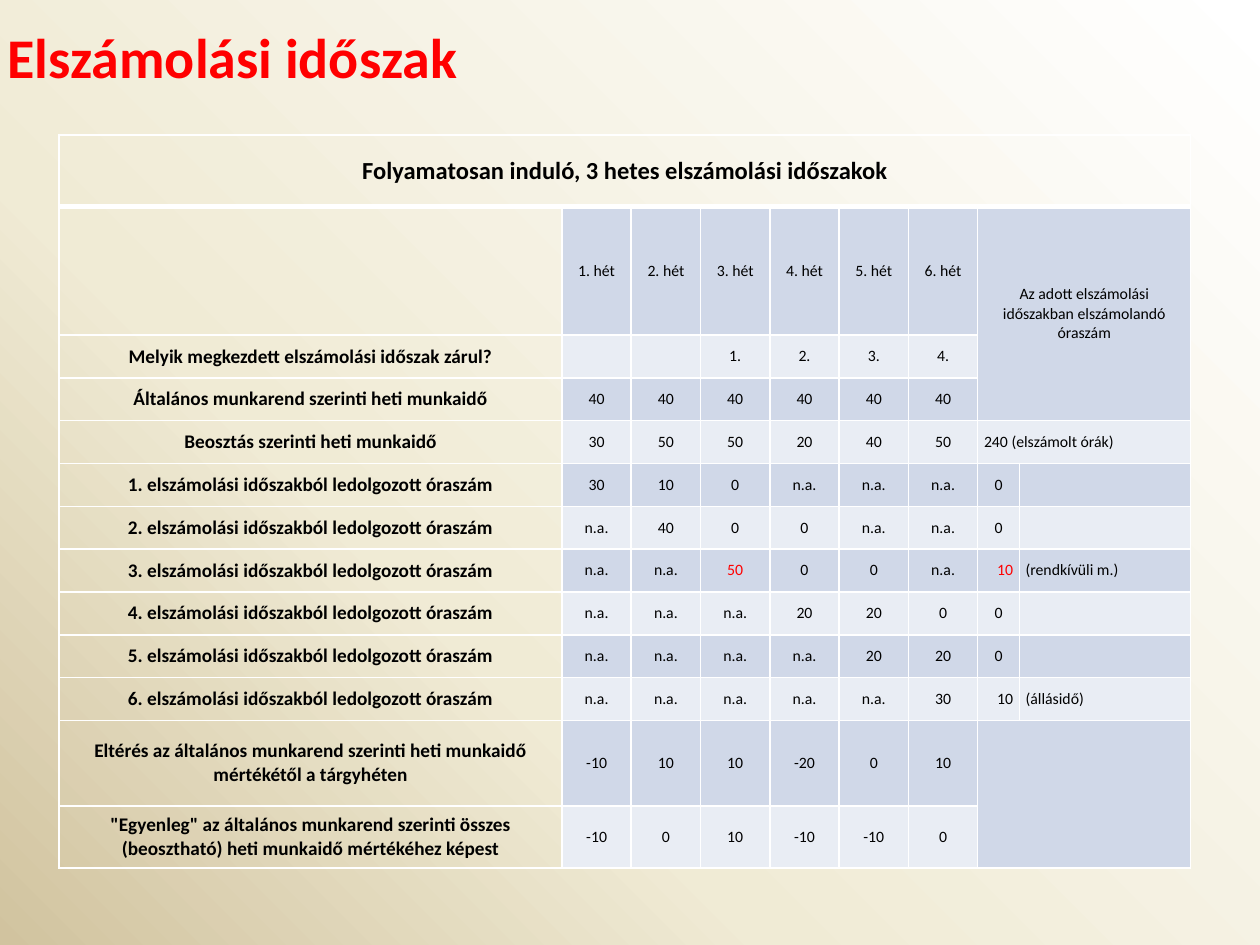
from copy import deepcopy

from pptx import Presentation
from pptx.dml.color import RGBColor
from pptx.enum.text import MSO_ANCHOR as Anchor, MSO_AUTO_SIZE as AutoSize, PP_ALIGN as Align
from pptx.oxml import parse_xml
from pptx.oxml.ns import nsdecls, qn
from pptx.util import Inches, Pt

COLORS = {"white": "FFFFFF", "cream": "F0EBD5", "sand": "D1C39F", "red": "FF0000",
          "black": "000000", "dark_band": "D0D8E8", "light_band": "E9EDF4"}
WIDTHS = [3.99] + [0.55] * 6 + [0.33, 1.36]
HEIGHTS = [0.57, 1.02] + [0.34] * 9 + [0.68, 0.49]
WORKED = "{}. elszámolási időszakból ledolgozott óraszám"
ROWS = [
    ["Folyamatosan induló, 3 hetes elszámolási időszakok"],
    ["", *[f"{week}. hét" for week in range(1, 7)],
     "Az adott elszámolási időszakban elszámolandó óraszám"],
    ["Melyik megkezdett elszámolási időszak zárul?", "", "", "1.", "2.", "3.", "4."],
    ["Általános munkarend szerinti heti munkaidő"] + ["40"] * 6,
    ["Beosztás szerinti heti munkaidő", "30", "50", "50", "20", "40", "50",
     "240 (elszámolt órák)"],
    [WORKED.format(1), "30", "10", "0", "n.a.", "n.a.", "n.a.", "0"],
    [WORKED.format(2), "n.a.", "40", "0", "0", "n.a.", "n.a.", "0"],
    [WORKED.format(3), "n.a.", "n.a.", "50", "0", "0", "n.a.", "10", "(rendkívüli m.)"],
    [WORKED.format(4), "n.a.", "n.a.", "n.a.", "20", "20", "0", "0"],
    [WORKED.format(5), "n.a.", "n.a.", "n.a.", "n.a.", "20", "20", "0"],
    [WORKED.format(6), "n.a.", "n.a.", "n.a.", "n.a.", "n.a.", "30", "10", "(állásidő)"],
    ["Eltérés az általános munkarend szerinti heti munkaidő mértékétől a tárgyhéten",
     "-10", "10", "10", "-20", "0", "10"],
    ['"Egyenleg" az általános munkarend szerinti összes (beosztható) heti munkaidő '
     "mértékéhez képest", "-10", "0", "10", "-10", "-10", "0"],
]
MERGES = [(0, 0, 0, 8), (1, 7, 3, 8), (4, 7, 4, 8), (11, 7, 12, 8)]
RED_CELLS = {(7, 3), (7, 7)}


class SlideWriter:
    """Holds the style and the current slide and adds elements to it."""

    def __init__(self, page, font="Calibri"):
        self.page = page
        self.font = font

    def color(self, name):
        return RGBColor.from_string(COLORS[name])

    def background(self, stops, angle):
        fill = self.page.background.fill
        fill.gradient()
        stop_list = next(self.page.element.iter(qn("a:gsLst")))
        while len(stop_list) < len(stops):
            stop_list.append(deepcopy(stop_list[0]))
        for stop, (position, name) in zip(fill.gradient_stops, stops):
            stop.position = position
            stop.color.rgb = self.color(name)
        fill.gradient_angle = angle

    def style(self, para, size, color, bold):
        for span in para.runs:
            span.font.name = self.font
            span.font.size = Pt(size)
            span.font.bold = bold
            span.font.color.rgb = self.color(color)

    def title(self, text, left, top, width, height):
        box = self.page.shapes.add_textbox(Inches(left), Inches(top), Inches(width), Inches(height))
        frame = box.text_frame
        frame.word_wrap = True
        frame.auto_size = AutoSize.SHAPE_TO_FIT_TEXT
        frame.text = text
        para = frame.paragraphs[0]
        properties = para._p.get_or_add_pPr()
        properties.set("marL", str(Inches(0.5)))
        properties.set("indent", str(Inches(-0.5)))
        self.style(para, 32, "red", True)

    def borders(self, cell, row):
        properties = cell._tc.get_or_add_tcPr()
        thickness = {"L": 1, "R": 1, "T": 3 if row == 1 else 1, "B": 3 if row == 0 else 1}
        for index, (side, points) in enumerate(thickness.items()):
            properties.insert(index, parse_xml(
                f'<a:ln{side} {nsdecls("a")} w="{Pt(points)}"><a:solidFill>'
                f'<a:srgbClr val="{COLORS["white"]}"/></a:solidFill></a:ln{side}>'))

    def cell(self, cell, row, column, text):
        cell.margin_left = cell.margin_right = Inches(0.05)
        cell.margin_top = cell.margin_bottom = 0
        cell.vertical_anchor = Anchor.MIDDLE
        self.borders(cell, row)
        if row == 0 or column == 0:
            cell.fill.background()
        else:
            cell.fill.solid()
            cell.fill.fore_color.rgb = self.color("dark_band" if row % 2 else "light_band")
        if not text:
            return
        cell.text_frame.text = text
        para = cell.text_frame.paragraphs[0]
        para.alignment = Align.CENTER
        if column > 6 and "(" in text:
            para.alignment = Align.LEFT
        elif column == 7 and text == "10":
            para.alignment = Align.RIGHT
        size = 14 if row == 0 else 11 if column == 0 else 9
        self.style(para, size, "red" if (row, column) in RED_CELLS else "black", column == 0)

    def table(self, left, top):
        table = self.page.shapes.add_table(
            len(HEIGHTS), len(WIDTHS), Inches(left), Inches(top),
            Inches(sum(WIDTHS)), Inches(sum(HEIGHTS))).table
        table.first_row = table.horz_banding = False
        for column, width in zip(table.columns, WIDTHS):
            column.width = Inches(width)
        for row, (height, texts) in enumerate(zip(HEIGHTS, ROWS)):
            table.rows[row].height = Inches(height)
            for column in range(len(WIDTHS)):
                text = texts[column] if column < len(texts) else ""
                self.cell(table.cell(row, column), row, column, text)
        for top_row, first, bottom_row, last in MERGES:
            table.cell(top_row, first).merge(table.cell(bottom_row, last))


def main():
    deck = Presentation()
    deck.slide_width, deck.slide_height = Inches(10), Inches(7.5)
    writer = SlideWriter(deck.slides.add_slide(deck.slide_layouts[6]))
    writer.background([(0, "white"), (0.65, "cream"), (1, "sand")], 225)
    writer.title("Elszámolási időszak", -0.04, 0.13, 10, 0.64)
    writer.table(0.47, 1.07)
    deck.save("out.pptx")


if __name__ == "__main__":
    main()
